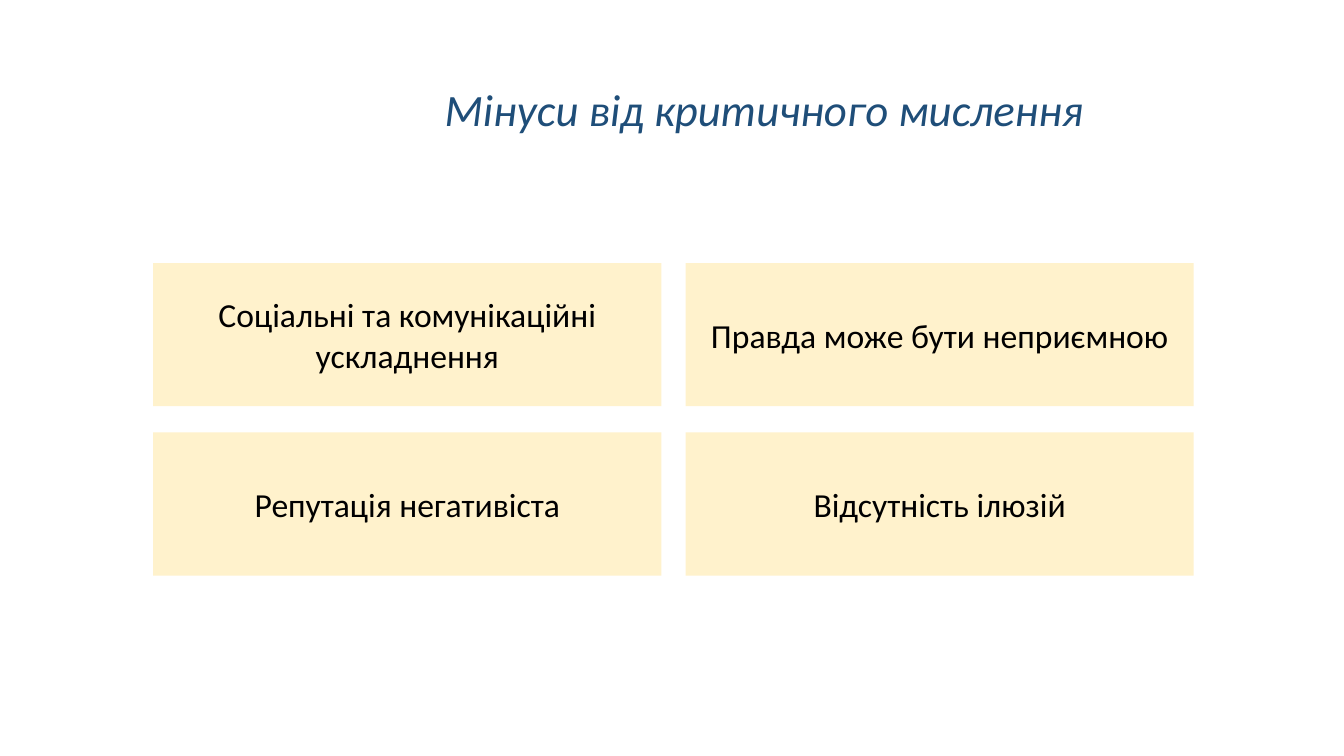
from dataclasses import dataclass

from pptx import Presentation
from pptx.dml.color import RGBColor
from pptx.enum.shapes import MSO_SHAPE
from pptx.enum.text import MSO_ANCHOR, MSO_AUTO_SIZE, PP_ALIGN
from pptx.util import Emu, Pt

RECTANGLE = MSO_SHAPE.RECTANGLE
MIDDLE = MSO_ANCHOR.MIDDLE
LEFT, CENTER = PP_ALIGN.LEFT, PP_ALIGN.CENTER
NO_AUTOFIT = MSO_AUTO_SIZE.NONE

EMU_PER_PX = 9144  # 100 px to the inch
TITLE_ONLY = 5


@dataclass(frozen=True)
class Theme:
    font: str = "Calibri"
    title_size: int = 32
    card_size: int = 24
    title_color: str = "1F4E79"
    card_color: str = "000000"
    card_fill: str = "FFF2CC"


THEME = Theme()

HEADING = "Мінуси від критичного мислення"
DRAWBACKS = [
    "Соціальні та комунікаційні ускладнення",
    "Правда може бути неприємною",
    "Репутація негативіста",
    "Відсутність ілюзій",
]

# Card grid in px
COLUMNS = 2
GRID_LEFT, GRID_TOP = 152, 261
CARD_WIDTH, CARD_HEIGHT = 504, 142
COLUMN_STEP, ROW_STEP = 528, 168


def px(length):
    return Emu(length * EMU_PER_PX)


def write_text(frame, text, size, color, align, italic=False):
    frame.text = text
    frame.word_wrap = True
    frame.auto_size = NO_AUTOFIT
    frame.vertical_anchor = MIDDLE
    paragraph = frame.paragraphs[0]
    paragraph.alignment = align
    font = paragraph.runs[0].font
    font.name = THEME.font
    font.size = Pt(size)
    font.italic = italic
    font.color.rgb = RGBColor.from_string(color)


def set_heading(slide, text, left, top, width, height):
    heading = slide.shapes.title
    heading.left, heading.top = px(left), px(top)
    heading.width, heading.height = px(width), px(height)
    write_text(heading.text_frame, text, THEME.title_size, THEME.title_color,
               LEFT, italic=True)
    heading.text_frame.paragraphs[0].line_spacing = 0.9


def add_card(slide, text, left, top):
    card = slide.shapes.add_shape(RECTANGLE, px(left), px(top),
                                  px(CARD_WIDTH), px(CARD_HEIGHT))
    card.shadow.inherit = False
    card.fill.solid()
    card.fill.fore_color.rgb = RGBColor.from_string(THEME.card_fill)
    card.line.fill.background()
    write_text(card.text_frame, text, THEME.card_size, THEME.card_color, CENTER)


def main():
    deck = Presentation()
    deck.slide_width, deck.slide_height = px(1333), px(750)
    slide = deck.slides.add_slide(deck.slide_layouts[TITLE_ONLY])

    # Heading
    set_heading(slide, HEADING, 431, 87, 816, 49)

    # Drawbacks, row by row
    for index, drawback in enumerate(DRAWBACKS):
        row, column = divmod(index, COLUMNS)
        add_card(slide, drawback, GRID_LEFT + column * COLUMN_STEP,
                 GRID_TOP + row * ROW_STEP)

    deck.save("out.pptx")


if __name__ == "__main__":
    main()
